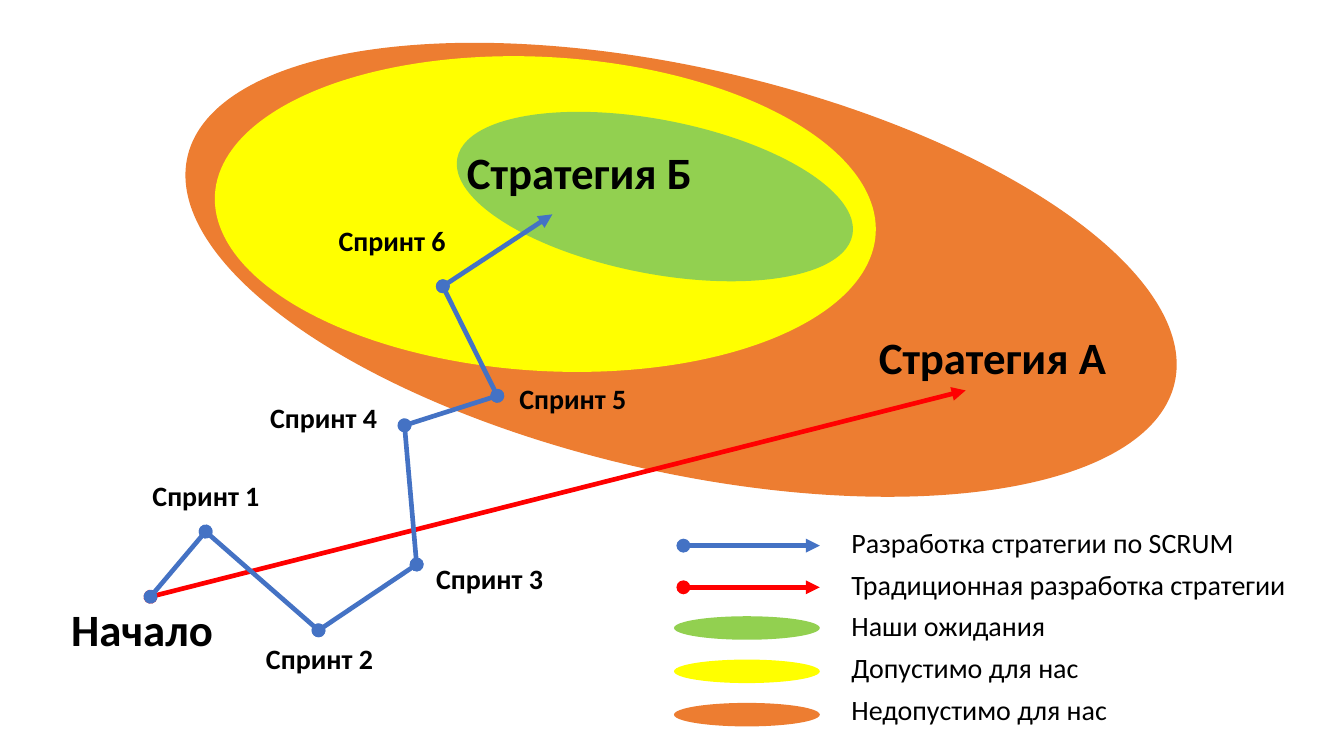
from dataclasses import dataclass
from itertools import pairwise

from lxml.etree import SubElement
from pptx import Presentation
from pptx.dml.color import RGBColor as Rgb
from pptx.enum.shapes import MSO_CONNECTOR as Connector, MSO_SHAPE as Preset
from pptx.enum.text import MSO_AUTO_SIZE as AutoSize
from pptx.oxml.ns import qn
from pptx.slide import Slide
from pptx.util import Inches, Pt

WIDTH, HEIGHT = Inches(20), Inches(11.25)
COLUMN, ROW = WIDTH / 20, HEIGHT / 11.25

Point = tuple[float, float]


@dataclass(frozen=True)
class Theme:
    """Colours, font and sizes of the slide."""
    scrum: str = "4472C4"
    traditional: str = "FF0000"
    expected: str = "92D050"
    acceptable: str = "FFFF00"
    unacceptable: str = "ED7D31"
    ink: str = "000000"
    font: str = "Calibri"
    title_size: int = 48
    label_size: int = 30
    line_width: int = 5


@dataclass(frozen=True)
class Zone:
    """An ellipse of outcomes, placed in columns and rows."""
    left: float
    top: float
    width: float
    height: float
    color: str
    rotation: float = 0


@dataclass(frozen=True)
class Label:
    """One line of text, placed in columns and rows."""
    text: str
    left: float
    top: float
    width: float
    size: int
    bold: bool = True


THEME = Theme()
TITLE, SMALL = THEME.title_size, THEME.label_size

ZONES = [
    Zone(2.6, 1.01, 15.07, 6.01, THEME.unacceptable, 12.9),
    Zone(3.19, 0.85, 9.85, 4.67, THEME.acceptable, 3.4),
    Zone(6.75, 1.78, 5.99, 2.29, THEME.expected, 11),
]
START: Point = (2.24, 8.88)
STRATEGY_A: Point = (14.37, 5.81)
SPRINT_PATH: list[Point] = [
    START, (3.06, 7.91), (4.74, 9.38), (6.2, 8.4),
    (6.02, 6.33), (7.4, 5.89), (6.59, 4.26), (8.22, 3.19),
]
TITLES = [
    Label("Стратегия А", 12.98, 4.85, 3.62, TITLE),
    Label("Стратегия Б", 6.85, 2.1, 3.58, TITLE),
    Label("Начало", 0.96, 8.9, 2.34, TITLE),
]
SPRINT_PLACES: list[Point] = [
    (2.17, 7.07), (3.86, 9.5), (6.39, 8.31),
    (3.92, 5.91), (7.63, 5.63), (4.94, 3.28),
]
LEGEND = [
    ("Разработка стратегии по SCRUM", 5.95),
    ("Традиционная разработка стратегии", 6.73),
    ("Наши ожидания", 3.12),
    ("Допустимо для нас", 3.62),
    ("Недопустимо для нас", 4.05),
]
LEGEND_PITCH, LEGEND_ZONE_PITCH = 0.62, 0.645


def add_zone(slide: Slide, zone: Zone) -> None:
    """Draw a filled ellipse without an outline."""
    ellipse = slide.shapes.add_shape(
        Preset.OVAL, round(zone.left * COLUMN), round(zone.top * ROW),
        round(zone.width * COLUMN), round(zone.height * ROW))
    ellipse.rotation = zone.rotation
    ellipse.shadow.inherit = False
    ellipse.fill.solid()
    ellipse.fill.fore_color.rgb = Rgb.from_string(zone.color)
    ellipse.line.fill.background()


def add_step(slide: Slide, start: Point, end: Point, color: str,
             ending: str = "triangle") -> None:
    """Draw a line that starts in a dot and has the given ending."""
    step = slide.shapes.add_connector(
        Connector.STRAIGHT, round(start[0] * COLUMN), round(start[1] * ROW),
        round(end[0] * COLUMN), round(end[1] * ROW))
    step.line.width = Pt(THEME.line_width)
    step.line.color.rgb = Rgb.from_string(color)
    properties = step._element.spPr
    outline = properties.find(qn("a:ln"))
    SubElement(outline, qn("a:headEnd"), type="oval")
    SubElement(outline, qn("a:tailEnd"), type=ending)
    SubElement(properties, qn("a:effectLst"))


def add_label(slide: Slide, label: Label) -> None:
    """Write one unwrapped line of text."""
    height = 0.91 if label.size == TITLE else 0.61
    frame = slide.shapes.add_textbox(
        round(label.left * COLUMN), round(label.top * ROW),
        round(label.width * COLUMN), round(height * ROW)).text_frame
    frame.word_wrap = False
    frame.auto_size = AutoSize.SHAPE_TO_FIT_TEXT
    line = frame.paragraphs[0]
    line.text = label.text
    line.font.name = THEME.font
    line.font.size = Pt(label.size)
    line.font.bold = label.bold
    line.font.color.rgb = Rgb.from_string(THEME.ink)


def add_legend(slide: Slide) -> None:
    """Draw the key to the paths and zones."""
    for row, color in enumerate((THEME.scrum, THEME.traditional)):
        y = 8.12 + row * LEGEND_PITCH
        add_step(slide, (10.17, y), (12.2, y), color)
    for row, color in enumerate((THEME.expected, THEME.acceptable, THEME.unacceptable)):
        add_zone(slide, Zone(10.03, 9.17 + row * LEGEND_ZONE_PITCH, 2.17, 0.35, color))
    for row, (meaning, width) in enumerate(LEGEND):
        add_label(slide, Label(meaning, 12.57, 7.77 + row * LEGEND_PITCH,
                               width, SMALL, bold=False))


def main() -> None:
    """Build the slide and save it."""
    deck = Presentation()
    deck.slide_width, deck.slide_height = WIDTH, HEIGHT
    slide = deck.slides.add_slide(deck.slide_layouts[6])
    for zone in ZONES:
        add_zone(slide, zone)
    add_step(slide, START, STRATEGY_A, THEME.traditional)
    for start, end in pairwise(SPRINT_PATH):
        ending = "triangle" if end == SPRINT_PATH[-1] else "oval"
        add_step(slide, start, end, THEME.scrum, ending)
    for title in TITLES:
        add_label(slide, title)
    for number, (left, top) in enumerate(SPRINT_PLACES, start=1):
        add_label(slide, Label(f"Спринт {number}", left, top, 1.81, SMALL))
    add_legend(slide)
    deck.save("out.pptx")


if __name__ == "__main__":
    main()
